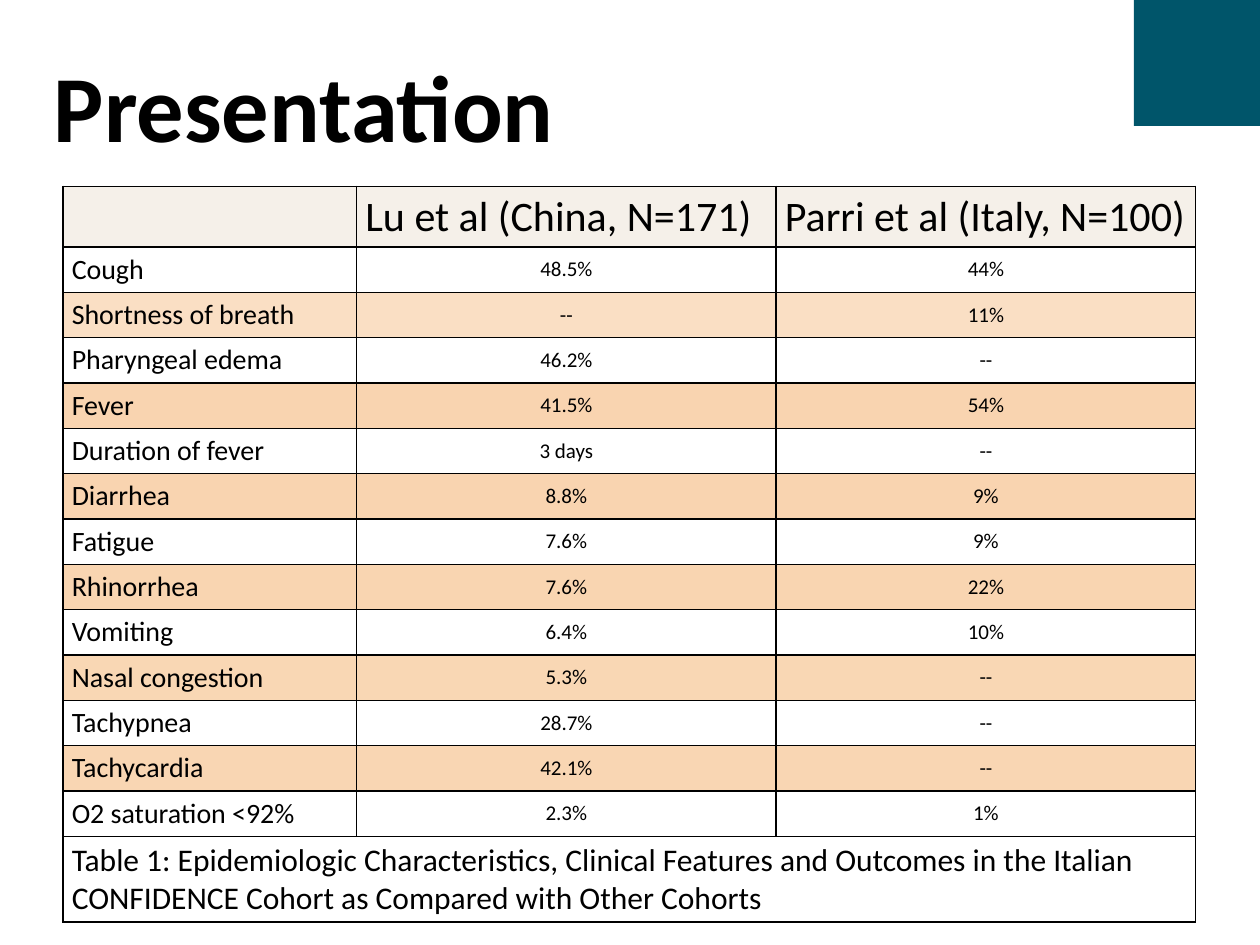
from lxml.etree import SubElement
from pptx import Presentation
from pptx.dml.color import RGBColor
from pptx.enum.text import MSO_ANCHOR, PP_ALIGN
from pptx.oxml.ns import qn
from pptx.util import Inches, Pt

WIDE, HIGH = 10, 7.5
FONT = "Calibri"
BLACK, TEAL, CREAM, PEACH = "000000", "00556A", "F5F0E9", "F7C18B"
COLS = [2.33, 3.33, 3.33]
ROWS = [0.46] + [0.36] * 13 + [0.65]
HEADS = ["", "Lu et al (China, N=171)", "Parri et al (Italy, N=100)"]
# Sign, share in each study, opacity of the row's tint
SIGNS = [
    ("Cough", "48.5%", "44%", 0),
    ("Shortness of breath", "--", "11%", 50),
    ("Pharyngeal edema", "46.2%", "--", 0),
    ("Fever", "41.5%", "54%", 68),
    ("Duration of fever", "3 days", "--", 0),
    ("Diarrhea", "8.8%", "9%", 68),
    ("Fatigue", "7.6%", "9%", 0),
    ("Rhinorrhea", "7.6%", "22%", 67),
    ("Vomiting", "6.4%", "10%", 0),
    ("Nasal congestion", "5.3%", "--", 64),
    ("Tachypnea", "28.7%", "--", 0),
    ("Tachycardia", "42.1%", "--", 65),
    ("O2 saturation <92%", "2.3%", "1%", 0),
]
NOTE = ("Table 1: Epidemiologic Characteristics, Clinical Features and Outcomes "
        "in the Italian CONFIDENCE Cohort as Compared with Other Cohorts")


def paint(fill, color):
    fill.solid()
    fill.fore_color.rgb = RGBColor.from_string(color)


def write(frame, text, size, bold=False, align=PP_ALIGN.LEFT):
    frame.text = text
    frame.word_wrap = True
    para = frame.paragraphs[0]
    para.alignment = align
    for run in para.runs:
        font = run.font
        font.name, font.size, font.bold = FONT, Pt(size), bold
        font.color.rgb = RGBColor.from_string(BLACK)


def curve(ends, steps=60):
    """Return points along a cubic Bezier, without its start."""
    a, b, c, d = ends
    return [tuple(p * (1 - t) ** 3 + 3 * q * t * (1 - t) ** 2
                  + 3 * r * t * t * (1 - t) + s * t ** 3
                  for p, q, r, s in zip(a, b, c, d))
            for t in (i / steps for i in range(1, steps + 1))]


def add_swoosh(slide):
    edge = curve([(WIDE, 0), (WIDE, 0.14), (9.99, 1.15), (9.99, 1.29)], 10)
    edge += curve([(9.99, 1.29), (9.98, 0), (3.36, 0.1), (0.03, 0.1)])
    pen = slide.shapes.build_freeform(0, 0, scale=Inches(1))
    pen.add_line_segments([(WIDE, 0)] + edge, close=True)
    shape = pen.convert_to_shape()
    shape.shadow.inherit = False
    paint(shape.fill, TEAL)
    shape.line.fill.background()


def add_title(slide, text):
    box = slide.shapes.add_textbox(
        Inches(0.33), Inches(0.25), Inches(8.79), Inches(1.27))
    frame = box.text_frame
    write(frame, text, 54, bold=True)
    frame.vertical_anchor = MSO_ANCHOR.MIDDLE
    frame.paragraphs[0].line_spacing = 0.9


def frame_cell(cell):
    """Give the cell its margins and black borders on all sides."""
    cell.margin_left = cell.margin_right = Inches(0.07)
    cell.margin_top = cell.margin_bottom = Inches(0.04)
    cell.vertical_anchor = MSO_ANCHOR.MIDDLE
    props = cell._tc.get_or_add_tcPr()
    for side in ("a:lnL", "a:lnR", "a:lnT", "a:lnB"):
        line = SubElement(props, qn(side), w=str(Pt(1)))
        solid = SubElement(line, qn("a:solidFill"))
        SubElement(solid, qn("a:srgbClr"), val=BLACK)


def tint(cell, alpha):
    if not alpha:
        cell.fill.background()
        return
    paint(cell.fill, PEACH)
    color = cell._tc.tcPr.find(qn("a:solidFill")).find(qn("a:srgbClr"))
    SubElement(color, qn("a:alpha"), val=str(alpha * 1000))


def add_grid(slide):
    table = slide.shapes.add_table(
        len(ROWS), len(COLS), Inches(0.5), Inches(1.48),
        Inches(sum(COLS)), Inches(sum(ROWS))).table
    table.first_row = table.horz_banding = False
    for col, width in zip(table.columns, COLS):
        col.width = Inches(width)
    for row, height in zip(table.rows, ROWS):
        row.height = Inches(height)
    for row in table.rows:
        for cell in row.cells:
            frame_cell(cell)

    for i, head in enumerate(HEADS):
        cell = table.cell(0, i)
        write(cell.text_frame, head, 24)
        paint(cell.fill, CREAM)
    for r, (*texts, alpha) in enumerate(SIGNS, 1):
        for i, text in enumerate(texts):
            cell = table.cell(r, i)
            size, align = (12, PP_ALIGN.CENTER) if i else (16, PP_ALIGN.LEFT)
            write(cell.text_frame, text, size, align=align)
            tint(cell, alpha)

    last = len(ROWS) - 1
    note = table.cell(last, 0)
    note.merge(table.cell(last, len(COLS) - 1))
    write(note.text_frame, NOTE, 18)
    note.fill.background()


def main():
    deck = Presentation()
    deck.slide_width, deck.slide_height = Inches(WIDE), Inches(HIGH)
    slide = deck.slides.add_slide(deck.slide_layouts[6])
    add_swoosh(slide)
    add_title(slide, "Presentation")
    add_grid(slide)
    deck.save("out.pptx")


if __name__ == "__main__":
    main()
